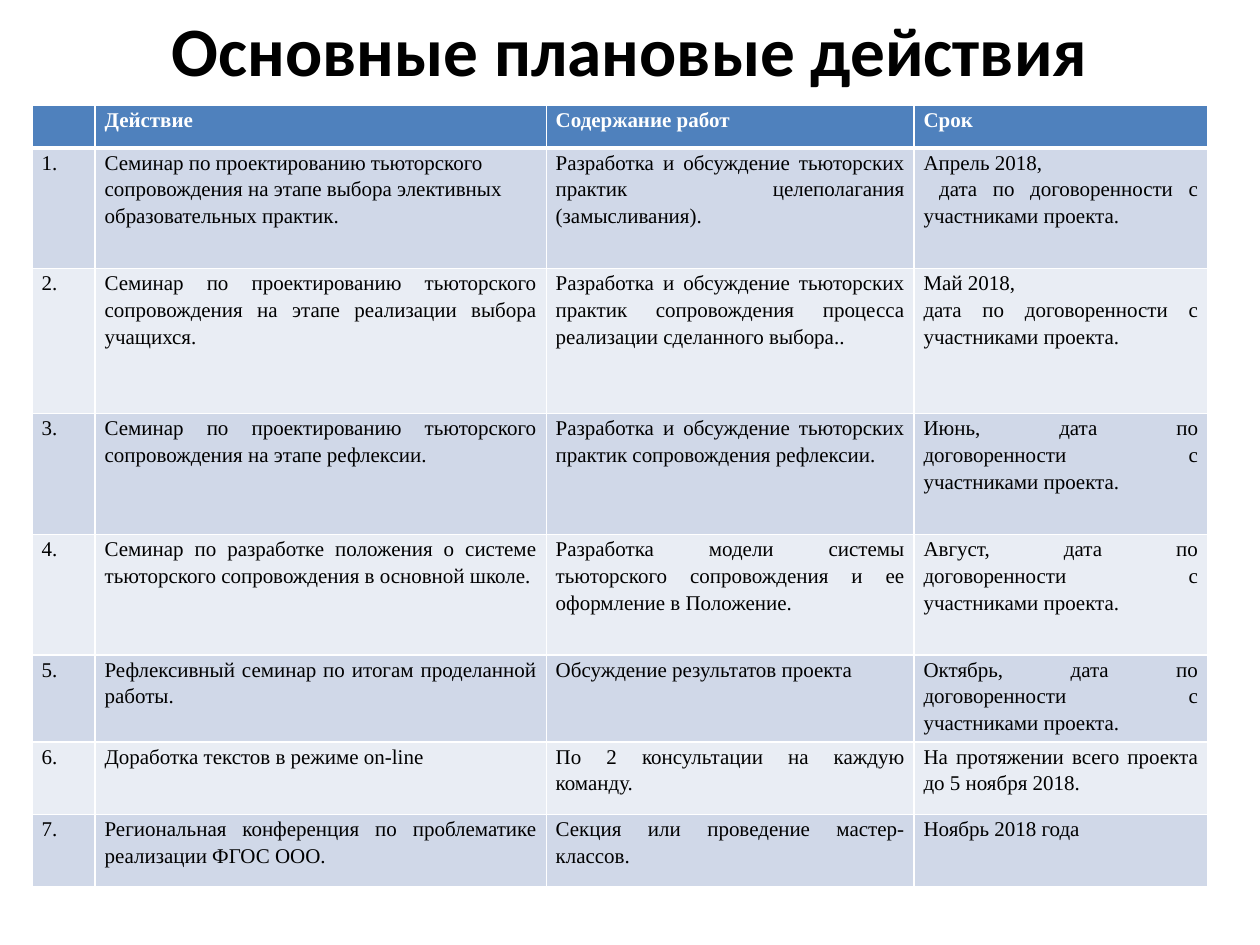
import pptx
import pptx.dml.color
import pptx.enum.text
import pptx.oxml
import pptx.oxml.ns
import pptx.util

Pt = pptx.util.Pt
RGBColor = pptx.dml.color.RGBColor
ALIGN = pptx.enum.text.PP_ALIGN
ANCHOR = pptx.enum.text.MSO_ANCHOR

BLACK = RGBColor(0x00, 0x00, 0x00)
WHITE = RGBColor(0xFF, 0xFF, 0xFF)
HEADER_BLUE = RGBColor(0x4F, 0x81, 0xBD)
BAND_DARK = RGBColor(0xD0, 0xD8, 0xE8)
BAND_LIGHT = RGBColor(0xE9, 0xED, 0xF4)

COLUMN_WIDTHS = [36, 257.8, 210.2, 167.8]
ROW_HEIGHTS = [24.5, 69, 82.8, 69, 69, 41.4, 41.4, 41.4]

HEADER = ["", "Действие", "Содержание работ", "Срок"]
ACTIONS = [
    ["Семинар по проектированию тьюторского сопровождения на этапе выбора "
     "элективных образовательных практик.",
     "Разработка и обсуждение тьюторских практик целеполагания (замысливания).",
     "Апрель 2018,\n дата по договоренности с участниками проекта."],
    ["Семинар по проектированию тьюторского сопровождения на этапе реализации "
     "выбора учащихся.",
     "Разработка и обсуждение тьюторских практик сопровождения процесса "
     "реализации сделанного выбора..",
     "Май 2018,\nдата по договоренности с участниками проекта."],
    ["Семинар по проектированию тьюторского сопровождения на этапе рефлексии.",
     "Разработка и обсуждение тьюторских практик сопровождения рефлексии.",
     "Июнь, дата по договоренности с участниками проекта."],
    ["Семинар по разработке положения о системе тьюторского сопровождения в "
     "основной школе.",
     "Разработка модели системы тьюторского сопровождения и ее оформление в "
     "Положение.",
     "Август, дата по договоренности с участниками проекта."],
    ["Рефлексивный семинар по итогам проделанной работы.",
     "Обсуждение результатов проекта",
     "Октябрь, дата по договоренности с участниками проекта."],
    ["Доработка текстов в режиме on-line",
     "По 2 консультации на каждую команду.",
     "На протяжении всего проекта до 5 ноября 2018."],
    ["Региональная конференция по проблематике реализации ФГОС ООО.",
     "Секция или проведение мастер-классов.",
     "Ноябрь 2018 года"],
]


def add_run(p, text, font, size, color, bold):
    r = p.add_run()
    r.text = text
    r.font.name = font
    r.font.size = Pt(size)
    r.font.color.rgb = color
    r.font.bold = bold


def add_title(slide, text):
    tf = slide.shapes.add_textbox(Pt(36), Pt(0), Pt(648), Pt(56)).text_frame
    tf.word_wrap = True
    tf.vertical_anchor = ANCHOR.MIDDLE
    p = tf.paragraphs[0]
    p.alignment = ALIGN.CENTER
    add_run(p, text, "Calibri", 39.6, BLACK, True)


def set_borders(cell, top, bottom):
    """Draw white cell borders; top and bottom are widths in points."""
    tc_pr = cell._tc.get_or_add_tcPr()
    for side, width in (("L", 1), ("R", 1), ("T", top), ("B", bottom)):
        tc_pr.append(pptx.oxml.parse_xml(
            f'<a:ln{side} {pptx.oxml.ns.nsdecls("a")} w="{Pt(width)}">'
            f'<a:solidFill><a:srgbClr val="{WHITE}"/></a:solidFill></a:ln{side}>'))


def fill_cell(cell, text, fill, color, bold, align):
    cell.margin_left = cell.margin_right = Pt(5.4)
    cell.margin_top = cell.margin_bottom = 0
    cell.fill.solid()
    cell.fill.fore_color.rgb = fill
    tf = cell.text_frame
    for i, line in enumerate(text.split("\n") if text else []):
        p = tf.add_paragraph() if i else tf.paragraphs[0]
        p.alignment = align
        p.line_spacing = 1.15
        add_run(p, line, "Times New Roman", 12, color, bold)


def add_plan_table(slide):
    rows = [HEADER] + [[f"{n}."] + action for n, action in enumerate(ACTIONS, 1)]
    table = slide.shapes.add_table(
        len(rows), len(HEADER), Pt(18.4), Pt(60),
        Pt(sum(COLUMN_WIDTHS)), Pt(sum(ROW_HEIGHTS))).table
    for column, width in zip(table.columns, COLUMN_WIDTHS):
        column.width = Pt(width)
    for i, (row, height) in enumerate(zip(rows, ROW_HEIGHTS)):
        table.rows[i].height = Pt(height)
        is_header = i == 0
        fill = HEADER_BLUE if is_header else BAND_DARK if i % 2 else BAND_LIGHT
        for j, text in enumerate(row):
            cell = table.cell(i, j)
            set_borders(cell, top=3 if i == 1 else 1, bottom=3 if is_header else 1)
            align = ALIGN.LEFT if (i, j) == (1, 1) else ALIGN.JUSTIFY
            fill_cell(cell, text, fill, WHITE if is_header else BLACK,
                      is_header, align)


def main():
    prs = pptx.Presentation()
    prs.slide_width, prs.slide_height = Pt(720), Pt(540)
    slide = prs.slides.add_slide(prs.slide_layouts[6])
    add_title(slide, "Основные плановые действия")
    add_plan_table(slide)
    prs.save("out.pptx")


if __name__ == "__main__":
    main()
